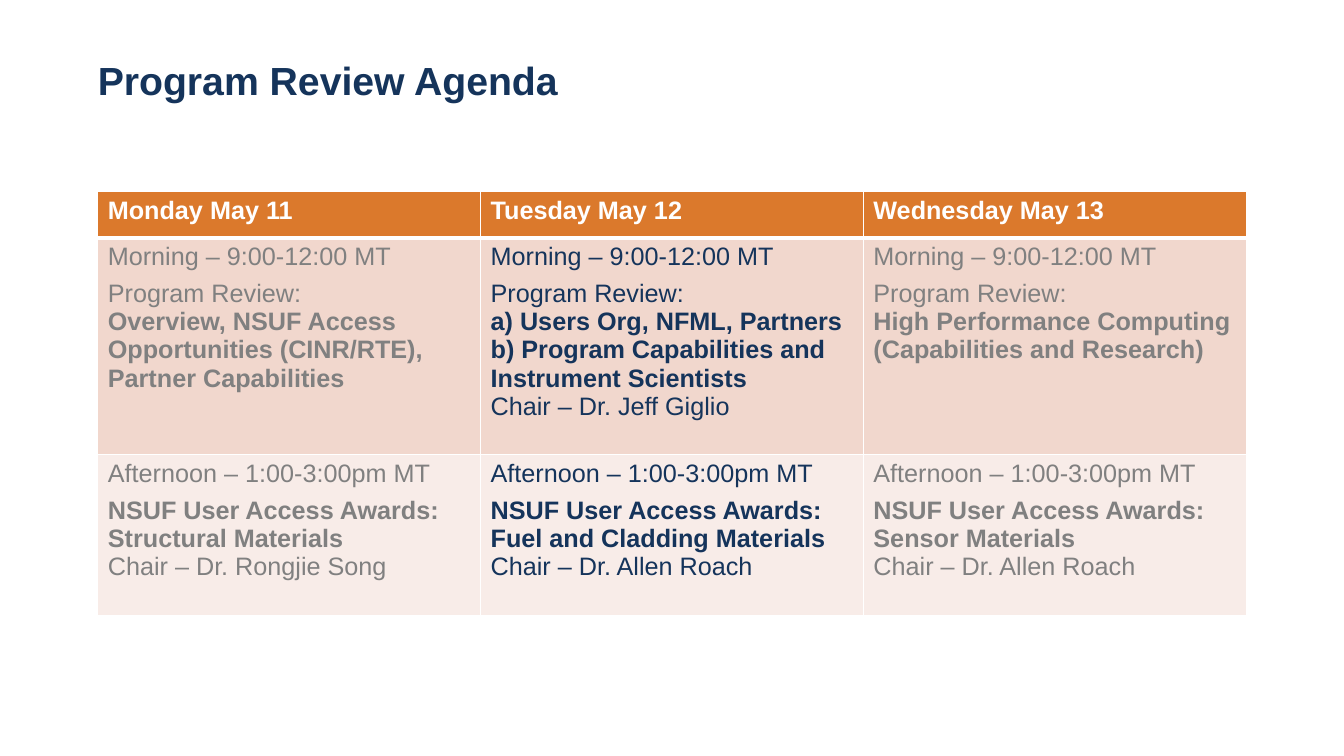
from dataclasses import dataclass
from lxml.etree import SubElement
from pptx import Presentation
from pptx.dml.color import RGBColor
from pptx.enum.text import MSO_ANCHOR
from pptx.oxml.ns import qn
from pptx.util import Inches, Pt

TITLE = "Program Review Agenda"
DAYS = ["Monday May 11", "Tuesday May 12", "Wednesday May 13"]
TODAY = 1
MORNING = ("Morning – 9:00-12:00 MT", False)
REVIEW = ("Program Review:", False)
AFTERNOON = ("Afternoon – 1:00-3:00pm MT", False)
AWARDS = ("NSUF User Access Awards:", True)
ROACH = ("Chair – Dr. Allen Roach", False)
SESSIONS = [
    [
        [MORNING, REVIEW,
         ("Overview, NSUF Access Opportunities (CINR/RTE), Partner Capabilities", True)],
        [MORNING, REVIEW,
         ("a) Users Org, NFML, Partners", True),
         ("b) Program Capabilities and Instrument Scientists", True),
         ("Chair – Dr. Jeff Giglio", False)],
        [MORNING, REVIEW,
         ("High Performance Computing (Capabilities and Research)", True)],
    ],
    [
        [AFTERNOON, AWARDS, ("Structural Materials", True),
         ("Chair – Dr. Rongjie Song", False)],
        [AFTERNOON, AWARDS, ("Fuel and Cladding Materials", True), ROACH],
        [AFTERNOON, AWARDS, ("Sensor Materials", True), ROACH],
    ],
]
HEIGHTS = [0.46, 2.15, 1.6]
LEFT, TOP, WIDTH = 0.97, 1.9, 11.39


@dataclass(frozen=True)
class Theme:
    font: str = "Arial"
    navy: str = "15345B"
    gray: str = "808080"
    white: str = "FFFFFF"
    head: str = "DB792C"
    bands: tuple = ("F1D7CD", "F8ECE8")
    title: int = 28
    body: int = 18
    gap: int = 6
    thin: int = 1
    thick: int = 3


theme = Theme()


def write(par, text, size, color, bold):
    run = par.add_run()
    run.text = text
    font = run.font
    font.name, font.size, font.bold = theme.font, Pt(size), bold
    font.color.rgb = RGBColor.from_string(color)


def border(cell, side, width):
    line = SubElement(cell._tc.get_or_add_tcPr(), qn(f"a:ln{side}"), w=str(Pt(width)))
    fill = SubElement(line, qn("a:solidFill"))
    SubElement(fill, qn("a:srgbClr"), val=theme.white)


def fill_cell(cell, lines, color, back, top, bottom):
    for side, width in zip("LRTB", (theme.thin, theme.thin, top, bottom)):
        border(cell, side, width)
    cell.fill.solid()
    cell.fill.fore_color.rgb = RGBColor.from_string(back)
    frame = cell.text_frame
    for i, (text, bold) in enumerate(lines):
        par = frame.add_paragraph() if i else frame.paragraphs[0]
        if i == 0 and len(lines) > 1:
            par.space_after = Pt(theme.gap)
        write(par, text, theme.body, color, bold)


def add_title(slide):
    box = slide.shapes.add_textbox(Inches(LEFT), Inches(0.61), Inches(WIDTH), Inches(1.1))
    frame = box.text_frame
    frame.word_wrap = True
    frame.vertical_anchor = MSO_ANCHOR.TOP
    frame.margin_left = frame.margin_top = 0
    par = frame.paragraphs[0]
    par.line_spacing = 0.9
    write(par, TITLE, theme.title, theme.navy, True)


def add_agenda(slide):
    table = slide.shapes.add_table(
        len(HEIGHTS), len(DAYS), Inches(LEFT), Inches(TOP),
        Inches(WIDTH), Inches(sum(HEIGHTS))).table
    for row, height in zip(table.rows, HEIGHTS):
        row.height = Inches(height)
    for c, day in enumerate(DAYS):
        table.columns[c].width = Inches(WIDTH / len(DAYS))
        fill_cell(table.cell(0, c), [(day, True)], theme.white, theme.head,
                  theme.thin, theme.thick)
        color = theme.navy if c == TODAY else theme.gray
        for r, (row, back) in enumerate(zip(SESSIONS, theme.bands), 1):
            top = theme.thick if r == 1 else theme.thin
            fill_cell(table.cell(r, c), row[c], color, back, top, theme.thin)


def main():
    deck = Presentation()
    deck.slide_width, deck.slide_height = Inches(13.33), Inches(7.5)
    slide = deck.slides.add_slide(deck.slide_layouts[6])
    add_title(slide)
    add_agenda(slide)
    deck.save("out.pptx")


if __name__ == "__main__":
    main()
